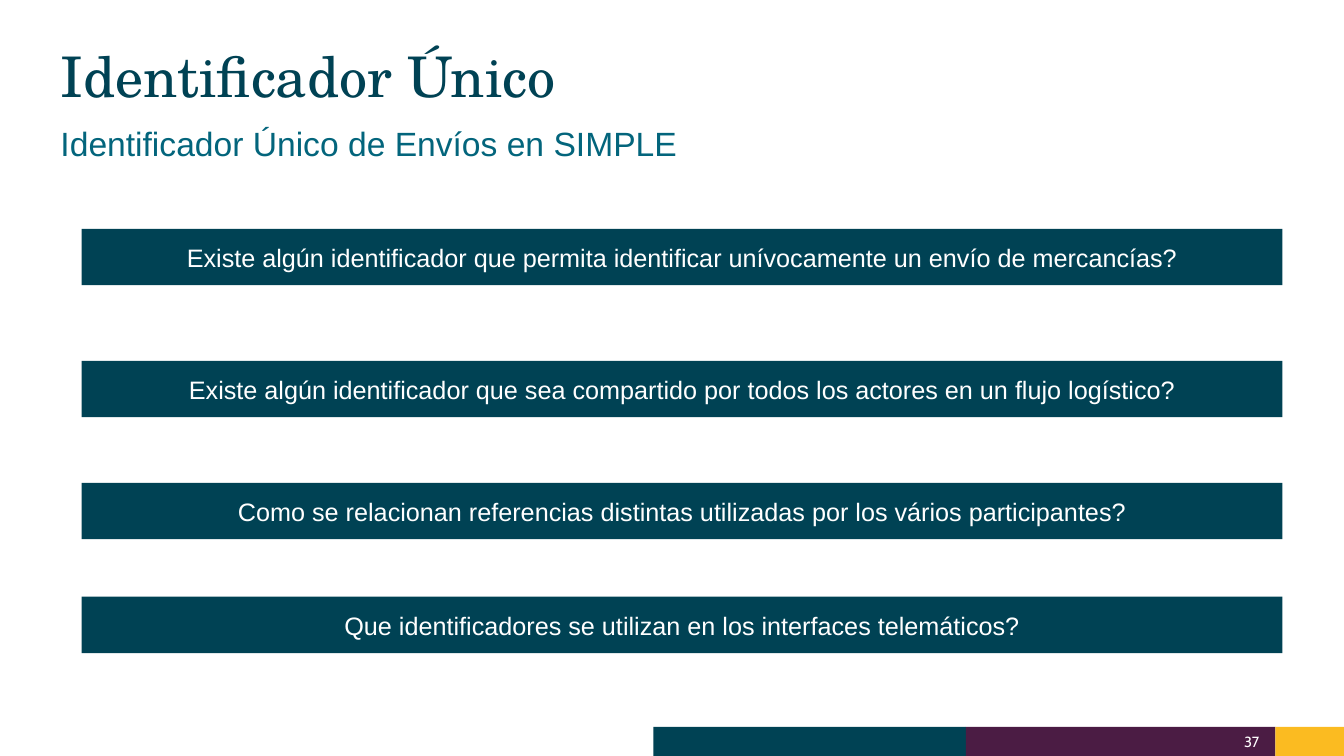
from pptx import Presentation
from pptx.dml.color import RGBColor
from pptx.enum.shapes import MSO_SHAPE
from pptx.enum.text import MSO_ANCHOR, PP_ALIGN
from pptx.util import Inches, Pt

COLORS = {"teal": "004254", "blue": "03657C", "purple": "4B1C44",
          "yellow": "FBBB21", "white": "FFFFFF"}

WIDTH, HEIGHT = 13.33, 7.5

# text, box, format, line spacing in points, anchor
HEADINGS = [
    ("Identificador Único", (0.6, 0.52, 11.58, 0.71),
     {"name": "TeX Gyre Schola", "size": Pt(40)}, "teal",
     {"line_spacing": Pt(40)}, MSO_ANCHOR.TOP),
    ("Identificador Único de Envíos en SIMPLE", (0.6, 1.23, 11.58, 0.95),
     {"name": "Arial", "size": Pt(24)}, "blue",
     {"line_spacing": Pt(28)}, MSO_ANCHOR.TOP),
]
PAGE_NUMBER = ("37", (11.08, 7.28, 1.41, 0.15),
               {"name": "Cabin", "size": Pt(10.5)}, "white",
               {"alignment": PP_ALIGN.RIGHT}, MSO_ANCHOR.MIDDLE)

# top, question
QUESTIONS = [
    (2.27, "Existe algún identificador que permita identificar unívocamente un envío de mercancías?"),
    (3.58, "Existe algún identificador que sea compartido por todos los actores en un flujo logístico?"),
    (4.79, "Como se relacionan referencias distintas utilizadas por los vários participantes?"),
    (5.92, "Que identificadores se utilizan en los interfaces telemáticos?"),
]
QUESTION_LEFT, QUESTION_WIDTH, QUESTION_HEIGHT = 0.81, 11.91, 0.56

# left edge, colour; each band runs to the next one
FOOTER_BANDS = [(6.48, "teal"), (9.58, "purple"), (12.65, "yellow")]
FOOTER_TOP = 7.21


def add_bar(slide, box, color):
    sp = slide.shapes.add_shape(MSO_SHAPE.RECTANGLE, *map(Inches, box))
    sp.shadow.inherit = False
    sp.fill.solid()
    sp.fill.fore_color.rgb = RGBColor.from_string(COLORS[color])
    sp.line.fill.background()
    return sp


def write(tf, text, font, color, paragraph, anchor):
    """Fill a text frame with one formatted paragraph."""
    tf.word_wrap = True
    tf.vertical_anchor = anchor
    p = tf.paragraphs[0]
    for name, value in paragraph.items():
        setattr(p, name, value)
    r = p.add_run()
    r.text = text
    for name, value in font.items():
        setattr(r.font, name, value)
    r.font.color.rgb = RGBColor.from_string(COLORS[color])


def add_label(slide, text, box, *style):
    tf = slide.shapes.add_textbox(*map(Inches, box)).text_frame
    for side in ("left", "top", "right", "bottom"):
        setattr(tf, f"margin_{side}", 0)
    write(tf, text, *style)


def main():
    prs = Presentation()
    prs.slide_width, prs.slide_height = Inches(WIDTH), Inches(HEIGHT)
    slide = prs.slides.add_slide(prs.slide_layouts[6])

    ends = [left for left, _ in FOOTER_BANDS[1:]] + [WIDTH]
    for (left, color), end in zip(FOOTER_BANDS, ends):
        add_bar(slide, (left, FOOTER_TOP, end - left, HEIGHT - FOOTER_TOP), color)
    for label in [PAGE_NUMBER, *HEADINGS]:
        add_label(slide, *label)

    for top, question in QUESTIONS:
        sp = add_bar(slide, (QUESTION_LEFT, top, QUESTION_WIDTH, QUESTION_HEIGHT), "teal")
        write(sp.text_frame, question, {"name": "Arial", "size": Pt(18)}, "white",
              {"alignment": PP_ALIGN.CENTER}, MSO_ANCHOR.MIDDLE)

    prs.save("out.pptx")


if __name__ == "__main__":
    main()
